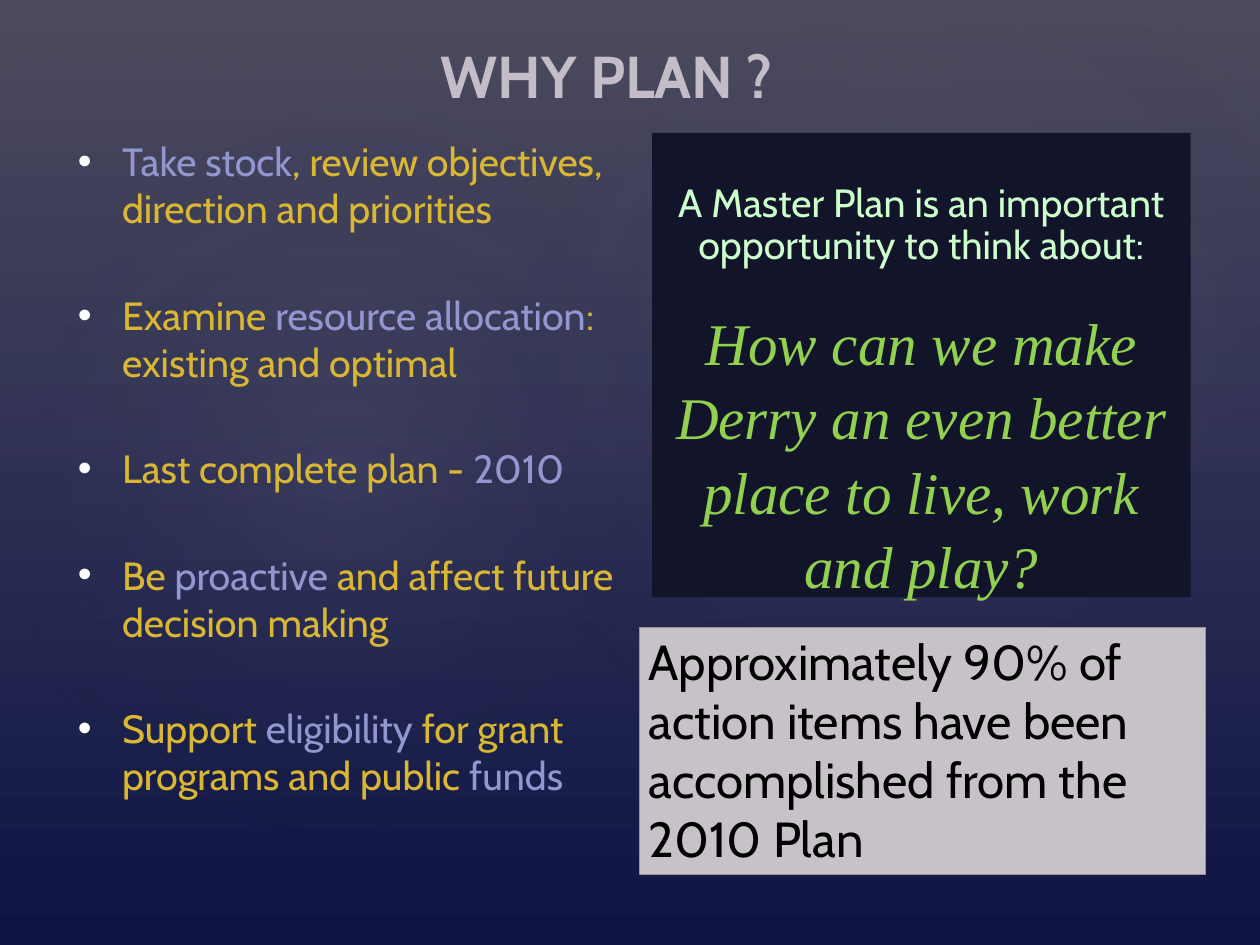
from dataclasses import dataclass

from lxml.etree import SubElement
from pptx import Presentation
from pptx.dml.color import RGBColor
from pptx.enum.shapes import MSO_SHAPE
from pptx.enum.text import MSO_ANCHOR, MSO_AUTO_SIZE, PP_ALIGN
from pptx.oxml.ns import qn
from pptx.util import Inches, Pt

SLIDE_WIDTH, SLIDE_HEIGHT = Inches(14.22), Inches(10.67)
COLUMNS, ROWS = 64, 48
LILAC, GOLD, MIST, NAVY = "9297CF", "D9B732", "C4BCC6", "242852"


@dataclass(frozen=True)
class Area:
    """A rectangle measured in grid columns and rows."""
    column: float
    row: float
    columns: float
    rows: float

    def bounds(self) -> tuple[int, int, int, int]:
        """Return left, top, width and height in slide units."""
        across, down = SLIDE_WIDTH / COLUMNS, SLIDE_HEIGHT / ROWS
        return (round(self.column * across), round(self.row * down),
                round(self.columns * across), round(self.rows * down))


@dataclass(frozen=True)
class Stop:
    """One gradient stop, with position and opacity in percent."""
    position: int
    color: str
    opacity: int = 100


@dataclass(frozen=True)
class Glow:
    """A soft tilted ellipse behind the content."""
    area: Area
    rotation: float


GLOWS = (Glow(Area(-1.94, 8.15, 38.75, 31.37), 294.3),
         Glow(Area(22.95, 0.81, 45.36, 33.3), 328.7))
REASONS = (
    (("Take stock", LILAC), (", review objectives, direction and priorities", GOLD)),
    (("Examine ", GOLD), ("resource allocation", LILAC), (": existing and optimal", GOLD)),
    (("Last complete plan - ", GOLD), ("2010", LILAC)),
    (("Be ", GOLD), ("proactive", LILAC), (" and affect future decision making", GOLD)),
    (("Support ", GOLD), ("eligibility", LILAC),
     (" for grant programs and public ", GOLD), ("funds", LILAC)),
)


def rgb(color: str) -> RGBColor:
    """Turn a hex string into a colour."""
    return RGBColor.from_string(color)


def fill_gradient(fill, element, stops: tuple[Stop, ...], radial: bool = False) -> None:
    """Fill with a downward or a circular gradient."""
    fill.gradient()
    gradient = element.find(f".//{qn('a:gradFill')}")
    for child in list(gradient):
        gradient.remove(child)
    stop_list = SubElement(gradient, qn("a:gsLst"))
    for stop in stops:
        mark = SubElement(stop_list, qn("a:gs"), pos=str(stop.position * 1000))
        color = SubElement(mark, qn("a:srgbClr"), val=stop.color)
        SubElement(color, qn("a:alpha"), val=str(stop.opacity * 1000))
    if radial:
        circle = SubElement(gradient, qn("a:path"), path="circle")
        SubElement(circle, qn("a:fillToRect"), l="50000", t="50000", r="50000", b="50000")
    else:
        SubElement(gradient, qn("a:lin"), ang="5400000", scaled="0")


def add_panel(slide, area: Area, kind=MSO_SHAPE.RECTANGLE, fill: str = "", line: str = ""):
    """Add a shadowless shape with optional plain fill and outline."""
    shape = slide.shapes.add_shape(kind, *area.bounds())
    shape.shadow.inherit = False
    if fill:
        shape.fill.solid()
        shape.fill.fore_color.rgb = rgb(fill)
    if line:
        shape.line.color.rgb = rgb(line)
        shape.line.width = Pt(0.75)
    else:
        shape.line.fill.background()
    return shape


def prepare_frame(shape, top: float = 0.05, anchor=MSO_ANCHOR.TOP):
    """Set wrapping, insets and anchor of a text frame."""
    frame = shape.text_frame
    frame.word_wrap = True
    frame.auto_size = MSO_AUTO_SIZE.NONE
    frame.vertical_anchor = anchor
    frame.margin_left = frame.margin_right = Inches(0.1)
    frame.margin_top, frame.margin_bottom = Inches(top), Inches(0.05)
    return frame


def place(slide, placeholder, area: Area) -> None:
    """Move a placeholder to an area and in front of the backdrop."""
    placeholder.left, placeholder.top, placeholder.width, placeholder.height = area.bounds()
    slide.shapes._spTree.append(placeholder._element)


def add_bullet(paragraph) -> None:
    """Give a paragraph a white hanging bullet."""
    properties = paragraph._p.get_or_add_pPr()
    properties.set("marL", str(Inches(0.5)))
    properties.set("indent", str(-Inches(0.5)))
    color = SubElement(properties, qn("a:buClr"))
    SubElement(color, qn("a:srgbClr"), val="FFFFFF")
    SubElement(properties, qn("a:buChar"), char="•")


def write(frame, *segments: tuple[str, str], size: float, font: str = "Cabin",
          bold: bool = False, italic: bool = False, align=PP_ALIGN.LEFT,
          before: float = 0, spacing: float = 1.0, bullet: bool = False) -> None:
    """Write coloured segments as the next paragraph of a frame."""
    paragraph = frame.paragraphs[0] if not frame.text else frame.add_paragraph()
    if bullet:
        add_bullet(paragraph)
    paragraph.alignment = align
    paragraph.space_before = Pt(before)
    paragraph.line_spacing = spacing
    for text, color in segments:
        run = paragraph.add_run()
        run.text = text
        run.font.name, run.font.size = font, Pt(size)
        run.font.bold, run.font.italic = bold, italic
        run.font.color.rgb = rgb(color)


def draw_backdrop(slide) -> None:
    """Draw the background, its veil and its glows."""
    fill_gradient(slide.background.fill, slide.element,
                  (Stop(0, "4B4D65"), Stop(100, "0C1143")))
    veil = add_panel(slide, Area(0, 0, COLUMNS, ROWS))
    fill_gradient(veil.fill, veil._element, (Stop(0, "504652", 36), Stop(100, NAVY, 10)))
    for glow in GLOWS:
        ellipse = add_panel(slide, glow.area, MSO_SHAPE.OVAL)
        ellipse.rotation = glow.rotation
        fill_gradient(ellipse.fill, ellipse._element,
                      (Stop(0, MIST, 8), Stop(58, NAVY, 0)), radial=True)


def main() -> None:
    """Build and save the slide."""
    presentation = Presentation()
    presentation.slide_width, presentation.slide_height = SLIDE_WIDTH, SLIDE_HEIGHT
    slide = presentation.slides.add_slide(presentation.slide_layouts[1])
    draw_backdrop(slide)

    title, body = slide.shapes.title, slide.placeholders[1]
    place(slide, title, Area(0, 2, 61.65, 3.6))
    write(prepare_frame(title, anchor=MSO_ANCHOR.MIDDLE), ("WHY PLAN ?", MIST),
          size=48, bold=True, align=PP_ALIGN.CENTER)

    question = prepare_frame(add_panel(slide, Area(33.12, 6.75, 27.36, 23.58), fill="121429"),
                             top=0.57)
    write(question, ("A Master Plan is an important opportunity to think about:", "CCFFCC"),
          size=32, align=PP_ALIGN.CENTER, spacing=0.9)
    write(question, ("How can we make Derry an even better place to live, work and play?", "92D050"),
          size=48, font="Times New Roman", italic=True, align=PP_ALIGN.CENTER,
          before=28, spacing=1.05)

    place(slide, body, Area(3.5, 6.75, 28.9, 34.4))
    reasons = prepare_frame(body)
    for index, segments in enumerate(REASONS):
        write(reasons, *segments, size=32, before=48 if index else 0, bullet=True)

    result = add_panel(slide, Area(32.5, 31.86, 28.75, 12.56), fill="C7C1C8", line="9D90A0")
    write(prepare_frame(result),
          ("Approximately 90% of action items have been accomplished from the 2010 Plan", "000000"),
          size=40)
    presentation.save("out.pptx")


if __name__ == "__main__":
    main()
